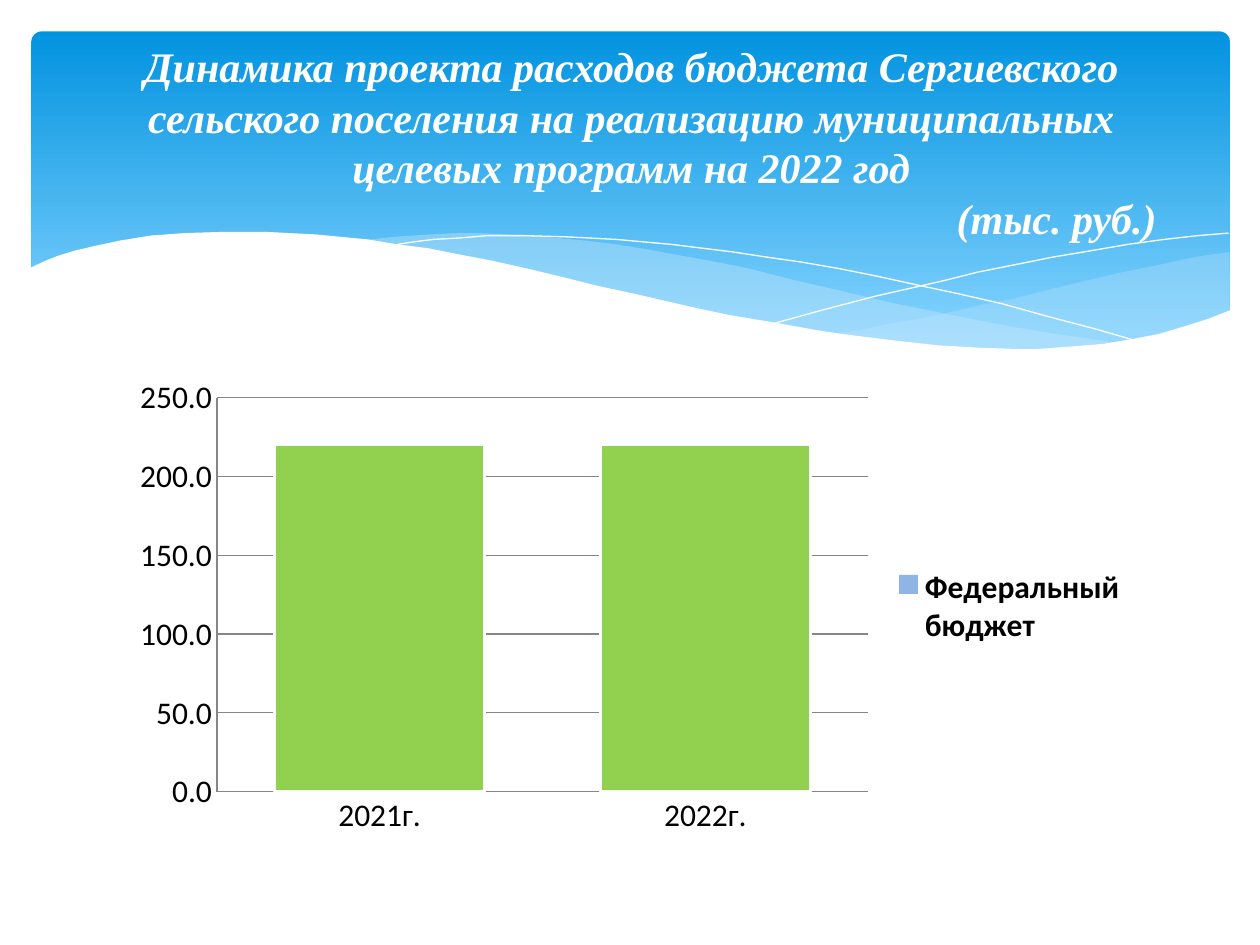
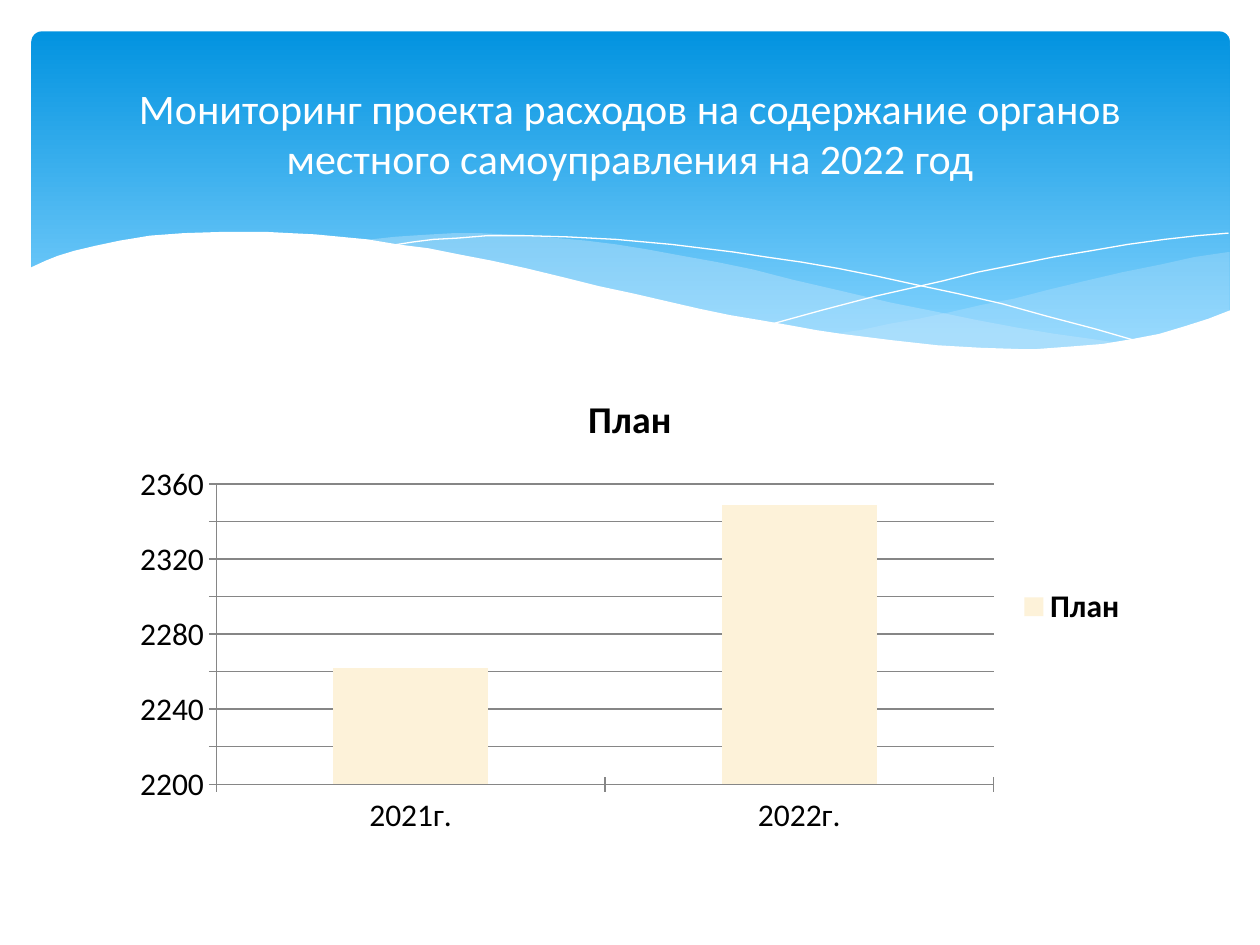
import pptx
import pptx.chart.data
import pptx.dml.color
import pptx.enum.chart
import pptx.enum.text
import pptx.enum.shapes
import pptx.oxml
import pptx.oxml.ns
import pptx.util
from lxml import etree

RGBColor = pptx.dml.color.RGBColor
WHITE = RGBColor(0xFF, 0xFF, 0xFF)
BLACK = RGBColor(0x00, 0x00, 0x00)
BAND_TOP = RGBColor(0x02, 0x93, 0xE0)
BAND_BOTTOM = RGBColor(0x83, 0xD3, 0xFE)
WAVE_BLUE = RGBColor(0xC6, 0xE7, 0xFC)
AXIS_GREY = RGBColor(0x86, 0x86, 0x86)
BAR_GREEN = RGBColor(0x92, 0xD0, 0x50)
BAR_CYAN = RGBColor(0x00, 0xB0, 0xF0)
BAR_BLUE = RGBColor(0x8F, 0xB5, 0xE5)
BAR_CREAM = RGBColor(0xFD, 0xF2, 0xD9)

SLIDE_WIDTH = pptx.util.Inches(10)
SLIDE_HEIGHT = pptx.util.Inches(7.5)
HUNDREDTH_INCH = 9144

# Left, top, width and height as percent of the slide
BAND_BOX = (2.5, 3.33, 95.1, 36)
CHART_BOX = (9.5, 39.07, 81, 50.27)

# Wave outlines in hundredths of an inch
RIGHT_WAVE = [
    (975, 200), (948, 204), (921, 210), (891, 216), (861, 223), (832, 230), (805, 237),
    (779, 242), (753, 248), (729, 253), (706, 257), (683, 262), (661, 265), (691, 269),
    (719, 272), (745, 275), (769, 277), (792, 277), (814, 278), (835, 277), (854, 276),
    (872, 274), (889, 272), (905, 269), (921, 265), (935, 262), (949, 257), (963, 252),
    (976, 247), (976, 200)]
LONG_WAVE = [
    (893, 273), (866, 269), (837, 265), (807, 260), (775, 254), (741, 247), (706, 240),
    (668, 231), (629, 222), (598, 214), (569, 208), (541, 203), (514, 198), (489, 194),
    (465, 191), (442, 189), (420, 187), (399, 186), (380, 185), (361, 185), (344, 186),
    (328, 187), (313, 188), (286, 191), (323, 196), (362, 203), (404, 211), (449, 222),
    (491, 232), (530, 240), (566, 248), (601, 255), (634, 261), (665, 266), (695, 270),
    (722, 274), (748, 276), (773, 277), (796, 278), (818, 278), (838, 278), (857, 277),
    (876, 275)]
FALLING_LINE = [
    (309, 195), (328, 192), (344, 190), (363, 189), (387, 187), (416, 187), (450, 188),
    (489, 190), (533, 194), (582, 200), (608, 204), (636, 208), (665, 213), (695, 219),
    (727, 226), (760, 233), (795, 241), (831, 251), (869, 261), (907, 272)]
RISING_LINE = [
    (613, 257), (653, 246), (695, 235), (748, 223), (776, 216), (806, 210), (836, 204),
    (866, 199), (895, 194), (924, 190), (951, 187), (975, 185)]
WHITE_WAVE = [
    (977, 246), (959, 253), (940, 259), (920, 265), (899, 269), (875, 273), (850, 275),
    (823, 277), (809, 277), (778, 276), (744, 274), (708, 270), (668, 265), (648, 262),
    (626, 258), (603, 254), (579, 250), (555, 245), (529, 239), (503, 233), (475, 227),
    (447, 220), (418, 213), (391, 207), (365, 202), (340, 197), (316, 194), (292, 190),
    (271, 188), (250, 186), (230, 185), (211, 184), (177, 184), (146, 185), (119, 187),
    (95, 191), (76, 195), (59, 199), (46, 203), (36, 207), (23, 213), (23, 329), (977, 329)]


def place(left, top, width, height):
    """Turn percent of the slide into lengths."""
    return [pptx.util.Emu(int(percent * side / 100)) for percent, side in
            zip((left, top, width, height), (SLIDE_WIDTH, SLIDE_HEIGHT) * 2)]


def add_band(slide):
    band = slide.shapes.add_shape(
        pptx.enum.shapes.MSO_SHAPE.ROUNDED_RECTANGLE, *place(*BAND_BOX))
    band.adjustments[0] = 0.03
    band.shadow.inherit = False
    band.line.fill.background()
    band.fill.gradient()
    band.fill.gradient_angle = 270
    for stop, position, color in zip(band.fill.gradient_stops, (0, 0.9),
                                     (BAND_TOP, BAND_BOTTOM)):
        stop.position = position
        stop.color.rgb = color


def add_outline(slide, points, closed):
    builder = slide.shapes.build_freeform(*points[0], scale=HUNDREDTH_INCH)
    builder.add_line_segments(points[1:], close=closed)
    outline = builder.convert_to_shape()
    outline.shadow.inherit = False
    return outline


def add_wave(slide, points, color, opacity=100):
    wave = add_outline(slide, points, True)
    wave.line.fill.background()
    wave.fill.solid()
    wave.fill.fore_color.rgb = color
    if opacity < 100:
        color_element = wave.fill._xPr.find(".//" + pptx.oxml.ns.qn("a:srgbClr"))
        etree.SubElement(color_element, pptx.oxml.ns.qn("a:alpha"), val=str(opacity * 1000))


def add_curve(slide, points):
    curve = add_outline(slide, points, False)
    curve.fill.background()
    curve.line.color.rgb = WHITE
    curve.line.width = pptx.util.Pt(0)


def add_header(slide):
    add_band(slide)
    add_wave(slide, RIGHT_WAVE, WAVE_BLUE, 29)
    add_wave(slide, LONG_WAVE, WAVE_BLUE, 40)
    add_curve(slide, FALLING_LINE)
    add_curve(slide, RISING_LINE)
    add_wave(slide, WHITE_WAVE, WHITE)


def add_title(slide, box, text, unit=None, font_name="Calibri", emphasis=False):
    """Write a centred title, with an optional unit at the right below it."""
    frame = slide.shapes.add_textbox(*place(*box)).text_frame
    frame.word_wrap = True
    frame.vertical_anchor = pptx.enum.text.MSO_ANCHOR.MIDDLE
    frame.margin_left = frame.margin_right = pptx.util.Inches(0.33)
    frame.text = text
    frame.paragraphs[0].alignment = pptx.enum.text.PP_ALIGN.CENTER
    if unit:
        paragraph = frame.add_paragraph()
        paragraph.text = unit
        paragraph.alignment = pptx.enum.text.PP_ALIGN.RIGHT
    for paragraph in frame.paragraphs:
        font = paragraph.font
        font.name = font_name
        font.size = pptx.util.Pt(24)
        font.bold = font.italic = emphasis
        font.color.rgb = WHITE


def style_font(font, size=18, bold=False):
    font.name = "Calibri"
    font.size = pptx.util.Pt(size)
    font.bold = bold
    font.color.rgb = BLACK


def add_column_chart(slide, chart_type, series, gap, scale, tick, number_format):
    """Draw columns; series holds (name, values, color), scale (low, high, step)."""
    data = pptx.chart.data.CategoryChartData()
    data.categories = ["2021г.", "2022г."]
    for name, values, _ in series:
        data.add_series(name, values)
    chart = slide.shapes.add_chart(chart_type, *place(*CHART_BOX), data).chart
    style_font(chart.font)
    chart.has_title = False

    plot = chart.plots[0]
    plot.gap_width = gap
    plot.vary_by_categories = False
    for plotted, (_, _, color) in zip(plot.series, series):
        plotted.format.fill.solid()
        plotted.format.fill.fore_color.rgb = color

    value_axis = chart.value_axis
    value_axis.minimum_scale, value_axis.maximum_scale, value_axis.major_unit = scale
    value_axis.tick_labels.number_format = number_format
    value_axis.tick_labels.number_format_is_linked = False
    value_axis.has_major_gridlines = True
    for axis in (chart.category_axis, value_axis):
        axis.major_tick_mark = tick
        axis.format.line.color.rgb = AXIS_GREY
    value_axis.major_gridlines.format.line.color.rgb = AXIS_GREY

    chart.has_legend = True
    chart.legend.position = pptx.enum.chart.XL_LEGEND_POSITION.RIGHT
    chart.legend.include_in_layout = False
    style_font(chart.legend.font, bold=True)
    return chart


def hide_legend_entries(chart, indexes):
    qn = pptx.oxml.ns.qn
    position = chart.legend._element.find(qn("c:legendPos"))
    for index in reversed(indexes):
        entry = etree.Element(qn("c:legendEntry"))
        etree.SubElement(entry, qn("c:idx"), val=str(index))
        etree.SubElement(entry, qn("c:delete"), val="1")
        position.addnext(entry)


def add_programs_slide(presentation):
    slide = presentation.slides.add_slide(presentation.slide_layouts[6])
    add_header(slide)
    chart = add_column_chart(
        slide, pptx.enum.chart.XL_CHART_TYPE.COLUMN_STACKED,
        [("Series 1", (220, 220), BAR_GREEN),
         ("Series 2", (0, 0), BAR_CYAN),
         ("Федеральный бюджет", (0, 0), BAR_BLUE)],
        gap=55, scale=(0, 250, 50),
        tick=pptx.enum.chart.XL_TICK_MARK.NONE, number_format="#,##0.0")
    chart.plots[0].overlap = 100
    bar_line = chart.plots[0].series[0].format.line
    bar_line.color.rgb = WHITE
    bar_line.width = pptx.util.Pt(1.5)
    hide_legend_entries(chart, [0, 1])
    add_title(slide, (5.1, 4.8, 90, 20.4),
              "Динамика проекта расходов бюджета Сергиевского сельского поселения "
              "на реализацию муниципальных целевых программ на 2022 год",
              "(тыс. руб.)", "Times New Roman", True)


def add_authorities_slide(presentation):
    slide = presentation.slides.add_slide(presentation.slide_layouts[6])
    add_header(slide)
    chart = add_column_chart(
        slide, pptx.enum.chart.XL_CHART_TYPE.COLUMN_CLUSTERED,
        [("План", (2262, 2349), BAR_CREAM)],
        gap=150, scale=(2200, 2360, 20),
        tick=pptx.enum.chart.XL_TICK_MARK.CROSS, number_format="General")
    chart.has_title = True
    chart.chart_title.text_frame.text = "План"
    style_font(chart.chart_title.text_frame.paragraphs[0].font, 21.6, True)
    add_title(slide, (5, 4.93, 90, 18.27),
              "Мониторинг проекта расходов на содержание органов "
              "местного самоуправления на 2022 год")


def main():
    presentation = pptx.Presentation()
    presentation.slide_width = SLIDE_WIDTH
    presentation.slide_height = SLIDE_HEIGHT
    add_programs_slide(presentation)
    add_authorities_slide(presentation)
    presentation.save("out.pptx")


if __name__ == "__main__":
    main()
